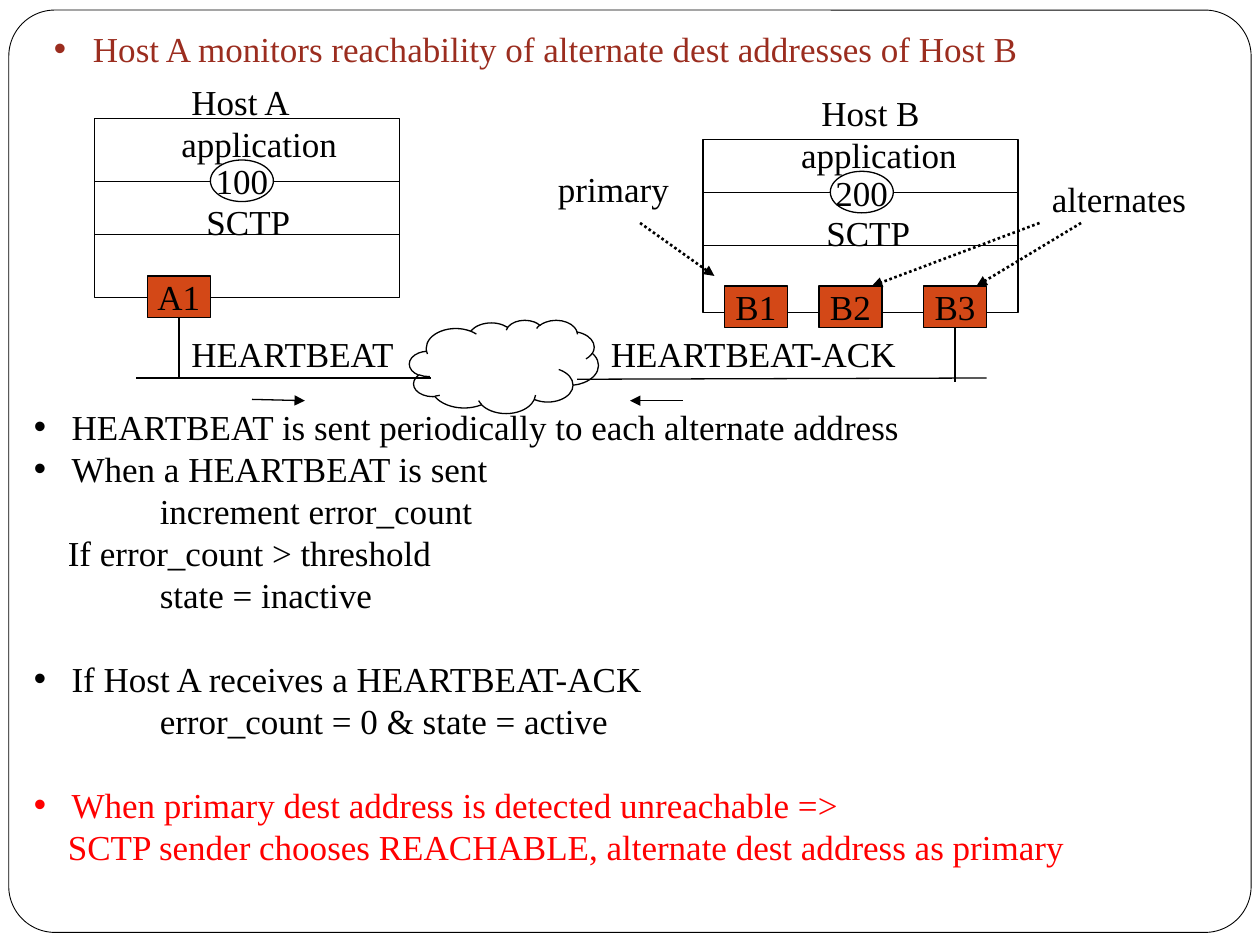
from dataclasses import dataclass

from lxml import etree
from pptx import Presentation
from pptx.dml.color import RGBColor
from pptx.enum import dml, shapes, text
from pptx.oxml import ns
from pptx.util import Inches, Pt


@dataclass(frozen=True)
class Theme:
    font: str = "Times New Roman"
    size: int = 20
    line_pitch: int = 24
    thin: float = 0.75
    dotted: float = 1.5
    black: str = "000000"
    white: str = "FFFFFF"
    heading: str = "9B2D1F"
    address: str = "D34817"
    alert: str = "FF0000"


THEME = Theme()
SHAPE = shapes.MSO_SHAPE
CHIP_W, CHIP_H = 0.5, 0.33


def rgb(value):
    return RGBColor.from_string(value)


def inches(*values):
    return [Inches(value) for value in values]


def write(paragraph, words, color=THEME.black):
    run = paragraph.add_run()
    run.text = words
    run.font.name = THEME.font
    run.font.size = Pt(THEME.size)
    run.font.color.rgb = rgb(color)


def indent(paragraph, left, bullet=False):
    """Indent the text by left inches, with a hanging bullet if asked."""
    properties = paragraph._p.get_or_add_pPr()
    properties.set("marL", str(Inches(left)))
    properties.set("indent", str(-Inches(left) if bullet else 0))
    if bullet:
        font = etree.SubElement(properties, ns.qn("a:buFont"))
        font.set("typeface", "Arial")
        mark = etree.SubElement(properties, ns.qn("a:buChar"))
        mark.set("char", "•")


def add_textbox(slide, box):
    frame = slide.shapes.add_textbox(*inches(*box)).text_frame
    frame.word_wrap = True
    return frame


def add_label(slide, words, left, top, width):
    frame = add_textbox(slide, (left, top, width, 0.43))
    write(frame.paragraphs[0], words)


def add_outline(slide, kind, box, fill=None, words=None, weight=THEME.thin):
    """Add a black-edged preset shape, with centred words if given."""
    shape = slide.shapes.add_shape(kind, *inches(*box))
    shape.shadow.inherit = False
    if fill:
        shape.fill.solid()
        shape.fill.fore_color.rgb = rgb(fill)
    else:
        shape.fill.background()
    shape.line.color.rgb = rgb(THEME.black)
    shape.line.width = Pt(weight)
    if words:
        frame = shape.text_frame
        frame.word_wrap = False
        frame.vertical_anchor = text.MSO_ANCHOR.MIDDLE
        paragraph = frame.paragraphs[0]
        paragraph.alignment = text.PP_ALIGN.CENTER
        write(paragraph, words)
    return shape


def add_line(slide, start, end, arrow=False, dotted=False):
    line = slide.shapes.add_connector(
        shapes.MSO_CONNECTOR.STRAIGHT, *inches(*start, *end))
    line.line.color.rgb = rgb(THEME.black)
    line.line.width = Pt(THEME.dotted if dotted else THEME.thin)
    if dotted:
        line.line.dash_style = dml.MSO_LINE.ROUND_DOT
    if arrow:
        tail = etree.SubElement(line.line._get_or_add_ln(), ns.qn("a:tailEnd"))
        tail.set("type", "triangle")
    etree.SubElement(line._element.spPr, ns.qn("a:effectLst"))
    return line


def add_frame(slide, box):
    frame = add_outline(slide, SHAPE.ROUNDED_RECTANGLE, box, THEME.white,
                        weight=0.5)
    frame.adjustments[0] = 0.05


def add_heading(slide, box):
    paragraph = add_textbox(slide, box).paragraphs[0]
    indent(paragraph, 0.31, bullet=True)
    write(paragraph, "Host A monitors reachability of alternate dest "
          "addresses of Host B", THEME.heading)


def add_host(slide, box, name, name_left, port, port_at, addresses, address_top):
    """Draw a protocol stack around its port; return its address chips."""
    left, top, width, height = box
    port_left, port_top = port_at
    add_outline(slide, SHAPE.RECTANGLE, box)
    chips = {
        address: add_outline(slide, SHAPE.RECTANGLE,
                             (chip_left, address_top, CHIP_W, CHIP_H),
                             THEME.address, address)
        for address, chip_left in addresses.items()
    }
    add_label(slide, name, name_left, port_top - 0.68, 1.11)
    for layer in range(2):
        divider = port_top + 0.17 + 0.42 * layer
        add_line(slide, (left, divider), (left + width, divider))
    add_label(slide, "application", port_left - 0.33, port_top - 0.35, 1.58)
    add_label(slide, "SCTP", port_left - 0.13, port_top + 0.27, 0.89)
    add_outline(slide, SHAPE.OVAL, (port_left, port_top, CHIP_W, CHIP_H),
                THEME.white, port)
    return chips


def add_network(slide, cloud_box, sender, receiver):
    """Draw the cloud, the links to both hosts and the message flow."""
    add_outline(slide, SHAPE.CLOUD, cloud_box)
    link_y = 3
    add_line(slide, (1.08, link_y), (3.42, link_y))
    add_line(slide, (4.58, link_y + 0.01), (7.83, link_y))
    for chip, x, bottom in ((sender, 1.42, link_y),
                            (receiver, 7.58, link_y + 0.03)):
        drop = add_line(slide, (x, 2.5), (x, bottom))
        drop.begin_connect(chip, 2)
    add_label(slide, "HEARTBEAT", 1.42, 2.59, 1.9)
    add_label(slide, "HEARTBEAT-ACK", 4.75, 2.59, 2.55)
    add_line(slide, (2, 3.17), (2.42, 3.18), arrow=True)
    add_line(slide, (5.42, 3.18), (5, 3.18), arrow=True)


def add_address_roles(slide):
    add_label(slide, "primary", 4.33, 1.28, 1.2)
    add_label(slide, "alternates", 8.25, 1.36, 1.54)
    for start, end in (((8.58, 1.77), (7.75, 2.27)),
                       ((8.25, 1.77), (6.92, 2.27)),
                       ((5.08, 1.77), (5.67, 2.19))):
        add_line(slide, start, end, arrow=True, dotted=True)


def add_rules(slide, box):
    bullet, continued, action = (0.3, True), (0.27, False), (1, False)
    rules = [
        [(bullet, "HEARTBEAT is sent periodically to each alternate address"),
         (bullet, "When a HEARTBEAT is sent"),
         (action, "increment error_count"),
         (continued, "If error_count > threshold"),
         (action, "state = inactive")],
        [(bullet, "If Host A receives a HEARTBEAT-ACK"),
         (action, "error_count = 0 & state = active")],
        [(bullet, "When primary dest address is detected unreachable =>"),
         (continued, "SCTP sender chooses REACHABLE, alternate dest address "
                     "as primary")],
    ]
    frame = add_textbox(slide, box)
    for group, lines in enumerate(rules):
        color = THEME.alert if group == len(rules) - 1 else THEME.black
        for row, (level, words) in enumerate(lines):
            first = group == row == 0
            paragraph = frame.paragraphs[0] if first else frame.add_paragraph()
            paragraph.line_spacing = Pt(THEME.line_pitch)
            if group and row == 0:
                paragraph.space_before = Pt(THEME.line_pitch)
            indent(paragraph, *level)
            write(paragraph, words, color)


def main():
    deck = Presentation()
    deck.slide_width, deck.slide_height = inches(10, 7.5)
    slide = deck.slides.add_slide(deck.slide_layouts[6])
    add_frame(slide, (0.07, 0.08, 9.86, 7.32))
    add_heading(slide, (0.33, 0.17, 9.37, 0.43))
    add_rules(slide, (0.17, 3.17, 9.67, 3.77))
    host_a = add_host(slide, (0.75, 0.94, 2.42, 1.42), "Host A", 1.42,
                      "100", (1.67, 1.27), {"A1": 1.17}, 2.19)
    host_b = add_host(slide, (5.58, 1.11, 2.5, 1.37), "Host B", 6.42,
                      "200", (6.59, 1.36),
                      {"B1": 5.75, "B2": 6.5, "B3": 7.33}, 2.27)
    add_network(slide, (3.25, 2.54, 1.5, 0.74), host_a["A1"], host_b["B3"])
    add_address_roles(slide)
    deck.save("out.pptx")


if __name__ == "__main__":
    main()
